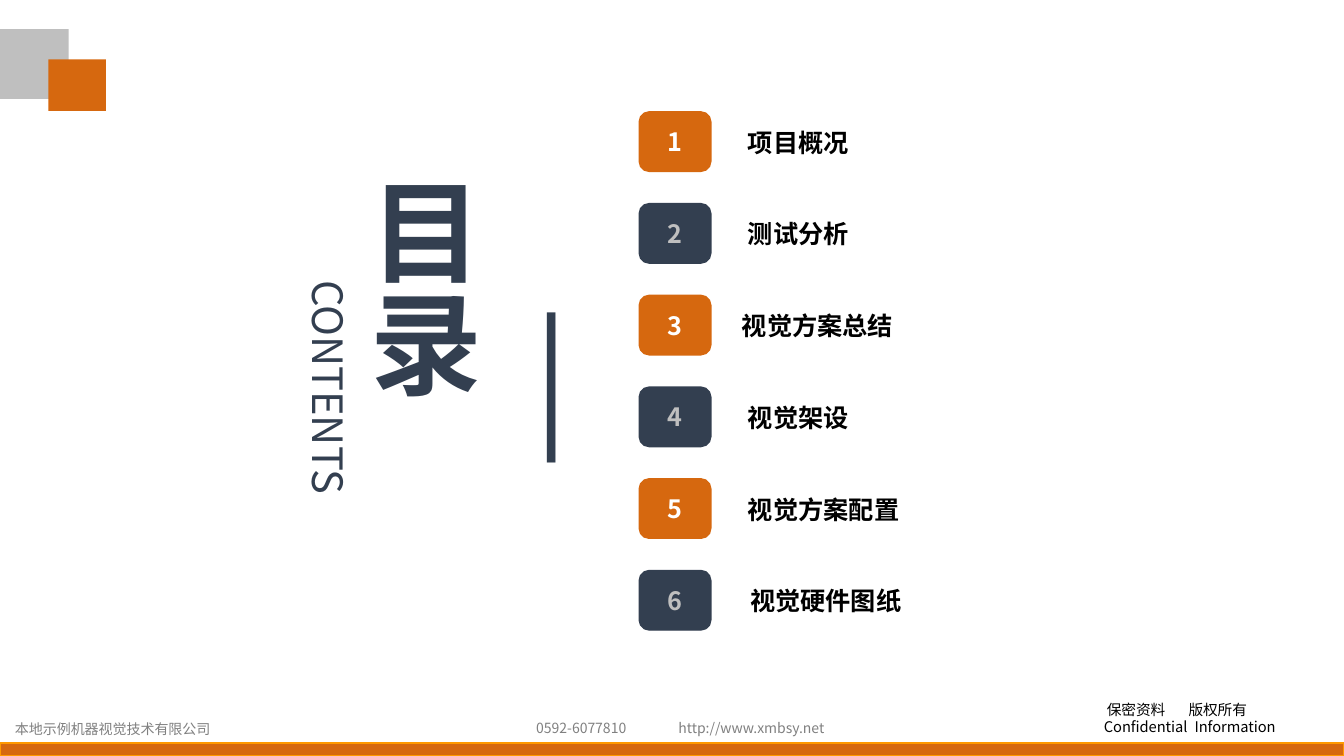
from lxml import etree
from pptx import Presentation
from pptx import util as u
from pptx.dml.color import RGBColor
from pptx.enum import shapes, text
from pptx.oxml.ns import qn

FONT = "Noto Sans CJK SC"
ORANGE, NAVY, SILVER = "D6680F", "333F50", "BFBFBF"
BLACK, GREY, WHITE, AMBER = "000000", "808080", "FFFFFF", "FF9900"
RECTANGLE = shapes.MSO_SHAPE.RECTANGLE
ROUNDED = shapes.MSO_SHAPE.ROUNDED_RECTANGLE
CENTER = text.PP_ALIGN.CENTER


def color(value):
    return RGBColor.from_string(value)


def add_block(slide, kind, box, fill, line=None):
    shape = slide.shapes.add_shape(kind, *map(u.Inches, box))
    shape.shadow.inherit = False
    shape.fill.solid()
    shape.fill.fore_color.rgb = color(fill)
    if line:
        shape.line.color.rgb = color(line)
        shape.line.width = u.Pt(1)
    else:
        shape.line.fill.background()
    return shape


def add_run(paragraph, words, size, ink, bold=False):
    run = paragraph.add_run()
    run.text = words
    font = run.font
    font.size, font.bold, font.name = u.Pt(size), bold, FONT
    font.color.rgb = color(ink)
    east_asian = etree.SubElement(run._r.get_or_add_rPr(), qn("a:ea"))
    east_asian.set("typeface", FONT)


def add_label(slide, box, words, size, ink, bold=False, wrap=True):
    shape = slide.shapes.add_textbox(*map(u.Inches, box))
    frame = shape.text_frame
    frame.word_wrap = wrap
    frame.auto_size = text.MSO_AUTO_SIZE.SHAPE_TO_FIT_TEXT
    add_run(frame.paragraphs[0], words, size, ink, bold)
    return shape


def clear_insets(frame):
    frame.margin_left = frame.margin_right = 0
    frame.margin_top = frame.margin_bottom = 0


def set_tab(paragraph, position, indent=0):
    properties = paragraph._p.get_or_add_pPr()
    properties.set("marL", str(u.Inches(indent)))
    tabs = etree.SubElement(properties, qn("a:tabLst"))
    tab = etree.SubElement(tabs, qn("a:tab"))
    tab.set("pos", str(u.Inches(position)))
    tab.set("algn", "l")


def add_notice(slide, box):
    shape = slide.shapes.add_textbox(*map(u.Inches, box))
    frame = shape.text_frame
    frame.word_wrap = True
    lines = [("保密资料\t版权所有", 0.81, 0.03),
             ("Confidential\tInformation", 0.9, 0)]
    for index, (words, position, indent) in enumerate(lines):
        paragraph = frame.add_paragraph() if index else frame.paragraphs[0]
        set_tab(paragraph, position, indent)
        add_run(paragraph, words, 10.5, BLACK)


def add_footer(slide, box):
    left, top, width, height = box
    add_block(slide, RECTANGLE, (left, top + 0.47, width, 0.13), ORANGE, AMBER)
    add_notice(slide, (left + 10.85, top, 2.17, 0.45))
    contacts = [("本地示例机器视觉技术有限公司", 0.05, 0.2, 2.35),
                ("0592-6077810", 5.22, 0.19, 1.1),
                ("http://www.xmbsy.net", 6.63, 0.19, 1.67)]
    for words, across, down, label_width in contacts:
        label_box = (left + across, top + down, label_width, 0.27)
        add_label(slide, label_box, words, 10, GREY)


def add_corner(slide, box):
    left, top, width, height = box
    add_block(slide, RECTANGLE, (left, top, 0.69, 0.69), SILVER)
    orange_box = (left + width - 0.57, top + height - 0.51, 0.57, 0.51)
    add_block(slide, RECTANGLE, orange_box, ORANGE)


def add_title(slide, box):
    left, top, width, height = box
    title = add_block(slide, RECTANGLE, (left, top, 1.34, height), WHITE)
    frame = title.text_frame
    clear_insets(frame)
    frame.vertical_anchor = text.MSO_ANCHOR.MIDDLE
    frame.word_wrap = True
    frame.auto_size = text.MSO_AUTO_SIZE.SHAPE_TO_FIT_TEXT
    frame._txBody.bodyPr.set("vert", "eaVert")
    frame.paragraphs[0].alignment = CENTER
    add_run(frame.paragraphs[0], "目录", 79.9, NAVY, True)

    subtitle_box = (left - 1.96, top + 1.84, 3.41, 0.5)
    subtitle = add_label(slide, subtitle_box, "CONTENTS", 29.8, NAVY)
    subtitle.rotation = 90
    clear_insets(subtitle.text_frame)
    subtitle.text_frame.paragraphs[0].alignment = CENTER

    bar_box = (left + width - 0.51, top + 1.09, 0.51, 1.72)
    add_label(slide, bar_box, "|", 96, NAVY, wrap=False)


def add_agenda(slide, box, entries):
    left, top, width, height = box
    tile_width, tile_height = 0.71, 0.59
    pitch = (height - tile_height) / (len(entries) - 1)
    for index, (words, shift) in enumerate(entries):
        row = top + index * pitch
        fill, ink = (NAVY, SILVER) if index % 2 else (ORANGE, WHITE)
        tile_box = (left, row, tile_width, tile_height)
        tile = add_block(slide, ROUNDED, tile_box, fill, fill)
        tile.text_frame.vertical_anchor = text.MSO_ANCHOR.MIDDLE
        paragraph = tile.text_frame.paragraphs[0]
        paragraph.alignment = CENTER
        add_run(paragraph, str(index + 1), 18, ink, True)
        label_box = (left + 0.98 + shift, row + 0.1, width - 0.98, 0.4)
        add_label(slide, label_box, words, 18, BLACK, True)


def main():
    presentation = Presentation()
    presentation.slide_width = u.Inches(13.33)
    presentation.slide_height = u.Inches(7.5)
    slide = presentation.slides.add_slide(presentation.slide_layouts[6])
    add_footer(slide, (0, 6.9, 13.33, 0.6))
    add_corner(slide, (-0.01, 0.29, 1.06, 0.81))
    add_title(slide, (3.52, 1.75, 2.18, 3.92))
    entries = [("项目概况", 0), ("测试分析", 0), ("视觉方案总结", -0.06),
               ("视觉架设", 0), ("视觉方案配置", 0), ("视觉硬件图纸", 0.02)]
    add_agenda(slide, (6.34, 1.11, 3.06, 5.14), entries)
    presentation.save("out.pptx")


if __name__ == "__main__":
    main()
